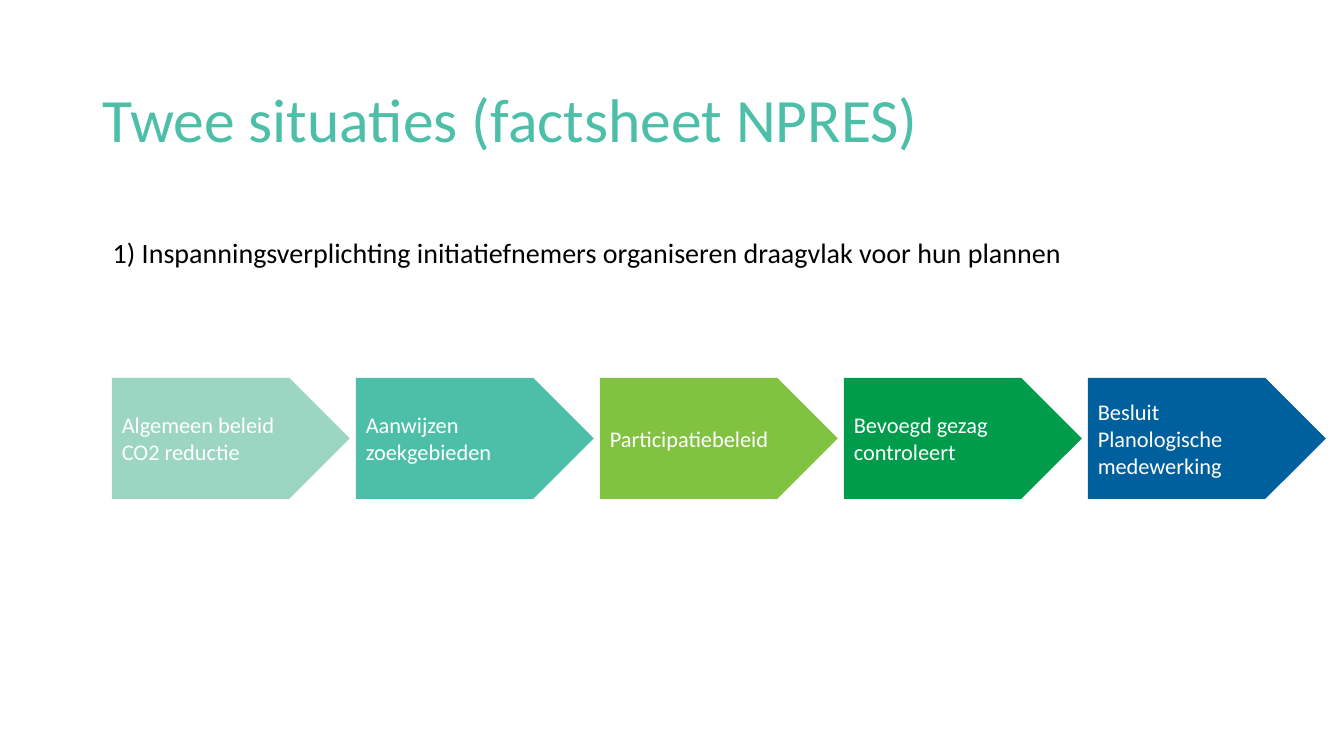
from pptx import Presentation
from pptx.dml.color import RGBColor
from pptx.enum.shapes import MSO_SHAPE
from pptx.enum.text import MSO_ANCHOR, PP_ALIGN
from pptx.util import Inches, Pt

PENTAGON = MSO_SHAPE.PENTAGON
TOP, MIDDLE = MSO_ANCHOR.TOP, MSO_ANCHOR.MIDDLE
LEFT = PP_ALIGN.LEFT

WHITE = RGBColor(0xFF, 0xFF, 0xFF)
BLACK = RGBColor(0x00, 0x00, 0x00)
MINT = RGBColor(0x9D, 0xD5, 0xC3)
TEAL = RGBColor(0x4D, 0xBF, 0xA9)
LIME = RGBColor(0x81, 0xC2, 0x41)
GREEN = RGBColor(0x00, 0x9B, 0x4B)
BLUE = RGBColor(0x00, 0x60, 0x9E)

FONT = "Calibri"
STEP_LEFT, STEP_TOP = 1.11, 3.75
STEP_WIDTH, STEP_HEIGHT = 2.36, 1.2
STEP_PITCH = 2.42

STEPS = [
    (["Algemeen beleid", "CO2 reductie"], MINT),
    (["Aanwijzen zoekgebieden"], TEAL),
    (["Participatiebeleid"], LIME),
    (["Bevoegd gezag controleert"], GREEN),
    (["Besluit", "Planologische medewerking"], BLUE),
]


def write(shape, lines, size, color, anchor, spacing=1.0):
    frame = shape.text_frame
    frame.word_wrap = True
    frame.vertical_anchor = anchor
    frame.text = "\n".join(lines)
    for para in frame.paragraphs:
        para.alignment = LEFT
        para.line_spacing = spacing
        para.font.name = FONT
        para.font.size = Pt(size)
        para.font.color.rgb = color


def add_text(page, area, text, size, color, spacing=1.0):
    box = page.shapes.add_textbox(*map(Inches, area))
    write(box, [text], size, color, TOP, spacing)


def add_step(page, column, lines, fill):
    left = STEP_LEFT + column * STEP_PITCH
    area = (left, STEP_TOP, STEP_WIDTH, STEP_HEIGHT)
    arrow = page.shapes.add_shape(PENTAGON, *map(Inches, area))
    arrow.shadow.inherit = False
    arrow.fill.solid()
    arrow.fill.fore_color.rgb = fill
    arrow.line.fill.background()
    write(arrow, lines, 16, WHITE, MIDDLE)


def main():
    deck = Presentation()
    deck.slide_width, deck.slide_height = Inches(13.33), Inches(7.5)
    page = deck.slides.add_slide(deck.slide_layouts[6])
    add_text(page, (0.92, 0.84, 11.5, 1.45),
             "Twee situaties (factsheet NPRES)", 44, TEAL, 0.9)
    for column, (lines, fill) in enumerate(STEPS):
        add_step(page, column, lines, fill)
    add_text(page, (1.02, 2.29, 11.23, 0.74),
             "1) Inspanningsverplichting initiatiefnemers organiseren "
             "draagvlak voor hun plannen", 20, BLACK)
    deck.save("out.pptx")


if __name__ == "__main__":
    main()
